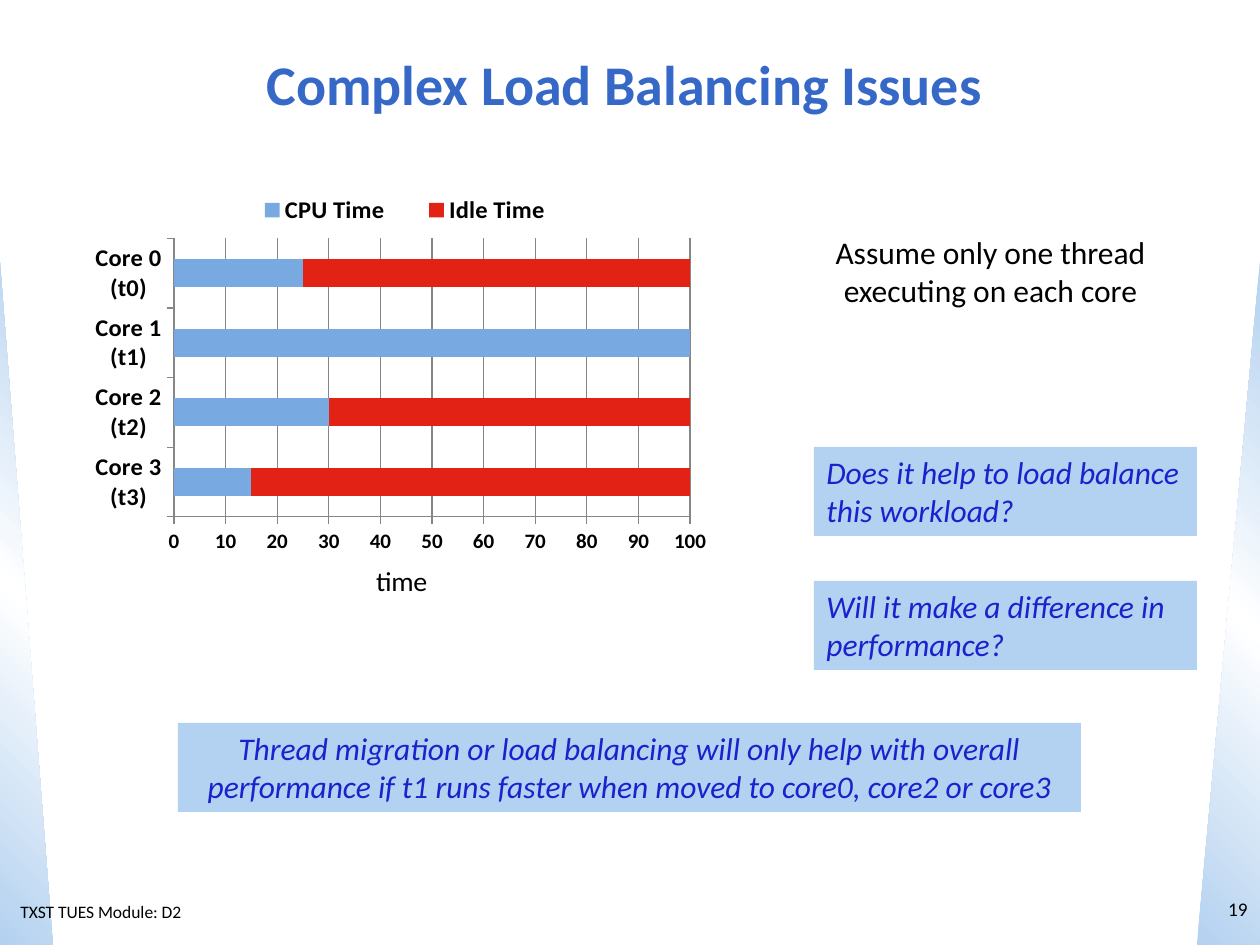
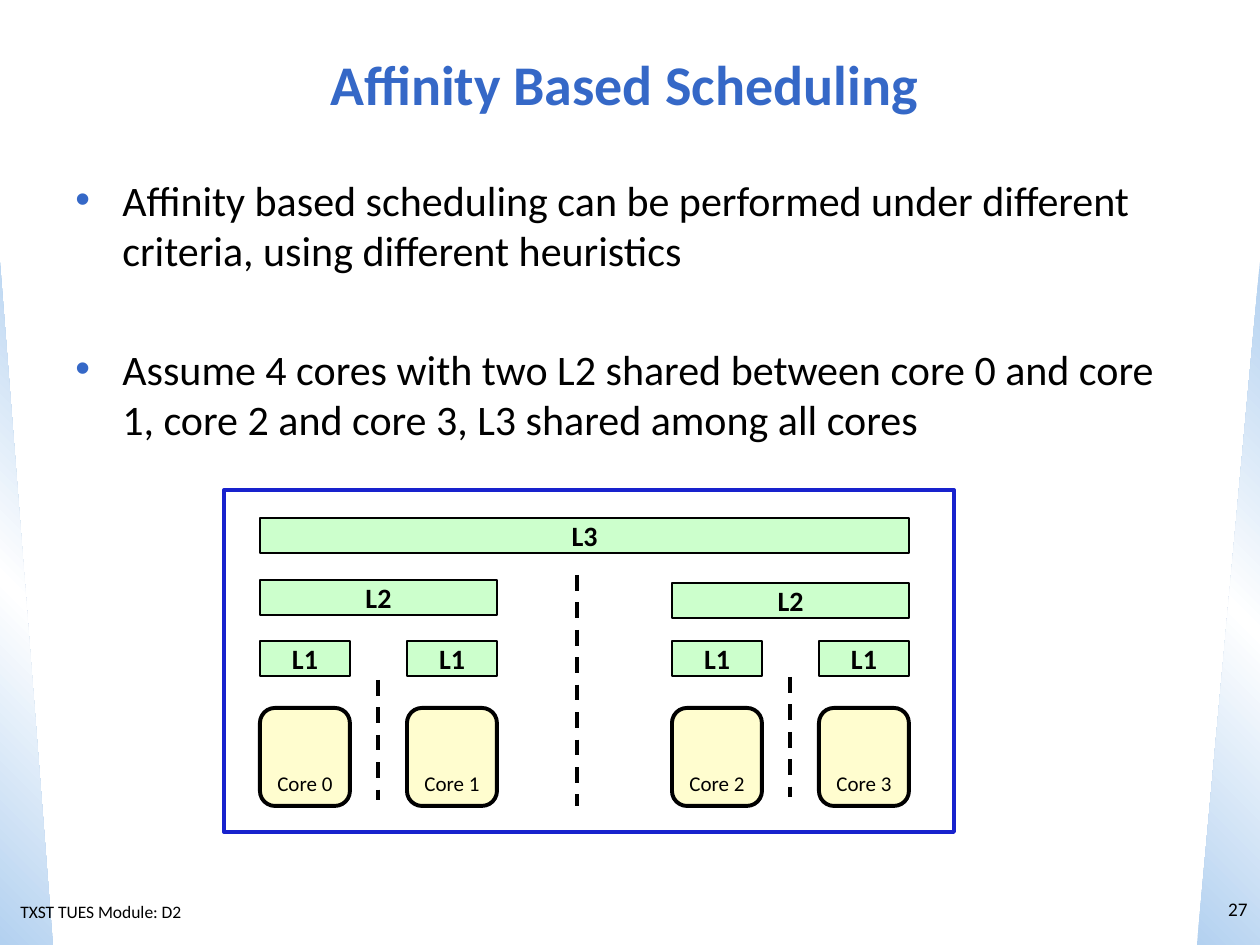
from copy import deepcopy
from dataclasses import dataclass

from lxml import etree
from pptx import Presentation
from pptx.chart.data import CategoryChartData
from pptx.dml.color import RGBColor
from pptx.enum.chart import XL_CHART_TYPE, XL_LEGEND_POSITION, XL_TICK_MARK
from pptx.enum.dml import MSO_LINE
from pptx.enum.shapes import MSO_CONNECTOR, MSO_SHAPE
from pptx.enum.text import MSO_ANCHOR, PP_ALIGN
from pptx.oxml.ns import qn
from pptx.util import Emu, Pt

RECT, ROUND = MSO_SHAPE.RECTANGLE, MSO_SHAPE.ROUNDED_RECTANGLE
WEDGE = MSO_SHAPE.RIGHT_TRIANGLE
LEFT, MID, RIGHT = PP_ALIGN.LEFT, PP_ALIGN.CENTER, PP_ALIGN.RIGHT
TOP, CENTER, BOTTOM = MSO_ANCHOR.TOP, MSO_ANCHOR.MIDDLE, MSO_ANCHOR.BOTTOM
OUT = XL_TICK_MARK.OUTSIDE
STACKED, ABOVE = XL_CHART_TYPE.BAR_STACKED, XL_LEGEND_POSITION.TOP
STRAIGHT, DASHED = MSO_CONNECTOR.STRAIGHT, MSO_LINE.DASH


@dataclass(frozen=True)
class Theme:
    font: str = "Calibri"
    ink: str = "000000"
    white: str = "FFFFFF"
    title: str = "3568C7"
    accent: str = "1822CD"
    pale: str = "B3D1F0"
    busy: str = "78A9E1"
    idle: str = "E12214"
    grid: str = "868686"
    cache: str = "CCFFCC"
    core: str = "FFFDCF"
    head: int = 32
    body: int = 24
    note: int = 18
    label: int = 16
    legend: int = 14
    small: int = 12
    page: int = 11
    foot: int = 10
    thin: float = 0.75
    thick: float = 2.25


T = Theme()


def px(n):
    return Emu(round(n * 914400 / 126))


def rgb(code):
    return RGBColor.from_string(code)


def style(font, size, color=T.ink, bold=False, italic=False):
    font.name, font.size = T.font, Pt(size)
    font.bold, font.italic = bold, italic
    font.color.rgb = rgb(color)


def write(shape, text, size, align=LEFT, anchor=TOP, wrap=True, **look):
    frame = shape.text_frame
    frame.word_wrap, frame.vertical_anchor = wrap, anchor
    frame.text = text
    para = frame.paragraphs[0]
    para.alignment = align
    style(para.font, size, **look)


def label(slide, box, text, size, **look):
    shape = slide.shapes.add_textbox(*map(px, box))
    write(shape, text, size, **look)
    return shape


def block(slide, box, fill=None, line=None, width=T.thin, kind=RECT):
    shape = slide.shapes.add_shape(kind, *map(px, box))
    shape.shadow.inherit = False
    if fill:
        shape.fill.solid()
        shape.fill.fore_color.rgb = rgb(fill)
    else:
        shape.fill.background()
    if line:
        shape.line.color.rgb = rgb(line)
        shape.line.width = Pt(width)
    else:
        shape.line.fill.background()
    return shape


def dash(slide, x, top, bottom):
    rule = slide.shapes.add_connector(
        STRAIGHT, px(x), px(top), px(x), px(bottom))
    rule.line.color.rgb = rgb(T.ink)
    rule.line.width = Pt(T.thick)
    rule.line.dash_style = DASHED
    etree.SubElement(rule._element.spPr, qn("a:effectLst"))


# Shared parts: side wedges and footer live on the layout
def wedge(slide, box, angle, flip=False):
    shape = block(slide, box, kind=WEDGE)
    shape.fill.gradient()
    shape.fill.gradient_angle = angle
    props = shape.element.spPr
    stops = props.find(qn("a:gradFill")).find(qn("a:gsLst"))
    stops.insert(1, deepcopy(stops[0]))
    colors = (T.pale, T.white, T.pale)
    for stop, pos, color in zip(shape.fill.gradient_stops, (0, 0.5, 1), colors):
        stop.position = pos
        stop.color.rgb = rgb(color)
    if flip:
        props.find(qn("a:xfrm")).set("flipH", "1")
    return shape


def dress(layout, slide):
    parts = [
        wedge(slide, (0, 262, 53, 683), 45),
        wedge(slide, (1197, 262, 63, 683), 315, flip=True),
        label(slide, (8, 895, 220, 34), "TXST TUES Module: D2", T.foot),
    ]
    tree = layout.shapes.element
    for i, part in enumerate(parts):
        part.element.find(qn("p:nvSpPr")).find(qn("p:cNvPr")).set(
            "id", str(100 + i))
        tree.insert(2 + i, part.element)


def start(deck, layout, title, page):
    slide = deck.slides.add_slide(layout)
    head = slide.shapes.title
    head.left, head.top, head.width, head.height = map(px, (31, 31, 1187, 105))
    write(head, title, T.head, MID, CENTER, color=T.title, bold=True)
    label(slide, (1197, 872, 63, 73), page, T.page, align=RIGHT, anchor=CENTER)
    return slide


# Chart of core usage
def place(part, inner=False, **spots):
    old = part.find(qn("c:layout"))
    if old is not None:
        part.remove(old)
    layout = etree.Element(qn("c:layout"))
    manual = etree.SubElement(layout, qn("c:manualLayout"))
    if inner:
        etree.SubElement(manual, qn("c:layoutTarget")).set("val", "inner")
    for mode in ("xMode", "yMode"):
        etree.SubElement(manual, qn("c:" + mode)).set("val", "edge")
    for key, value in spots.items():
        etree.SubElement(manual, qn("c:" + key)).set("val", str(value))
    cover = part.find(qn("c:overlay"))
    if cover is None:
        part.insert(0, layout)
    else:
        cover.addprevious(layout)


def usage(slide, box):
    data = CategoryChartData()
    data.categories = [f"Core {n} (t{n})" for n in (3, 2, 1, 0)]
    busy = (15, 30, 100, 25)
    data.add_series("CPU Time", busy)
    data.add_series("Idle Time", [100 - n for n in busy])
    chart = slide.shapes.add_chart(STACKED, *map(px, box), data).chart
    root = chart.element.find(qn("c:chart"))
    style(chart.font, T.foot)
    chart.has_title = False

    plot = chart.plots[0]
    plot.gap_width, plot.overlap, plot.vary_by_categories = 150, 100, False
    for series, color in zip(plot.series, (T.busy, T.idle)):
        series.format.fill.solid()
        series.format.fill.fore_color.rgb = rgb(color)
    place(root.find(qn("c:plotArea")), inner=True,
          x=0.14, y=0.11, w=0.76, h=0.69)

    cats, vals = chart.category_axis, chart.value_axis
    for axis, size in ((cats, T.legend), (vals, T.small)):
        axis.major_tick_mark = OUT
        axis.format.line.color.rgb = rgb(T.grid)
        style(axis.tick_labels.font, size, bold=True)
    vals.minimum_scale, vals.maximum_scale, vals.major_unit = 0, 100, 10
    vals.has_major_gridlines = True
    vals.major_gridlines.format.line.color.rgb = rgb(T.grid)
    frame = vals.axis_title.text_frame
    frame.text = "time"
    style(frame.paragraphs[0].font, T.label)
    place(frame._txBody.getparent().getparent(), x=0.43, y=0.9)

    chart.has_legend = True
    legend = chart.legend
    legend.position = ABOVE
    legend.include_in_layout = False
    style(legend.font, T.legend, bold=True)
    place(root.find(qn("c:legend")), x=0.22, y=0, w=0.52, h=0.08)


def note(slide, box, text, align=LEFT):
    write(block(slide, box, T.pale), text, T.note, align,
          color=T.accent, italic=True)


def balance(deck, layout):
    slide = start(deck, layout, "Complex Load Balancing Issues", "19")
    dress(layout, slide)
    usage(slide, (79, 194, 679, 413))
    label(slide, (799, 227, 383, 89),
          "Assume only one thread executing on each core", T.note, align=MID)
    asks = ("Does it help to load balance this workload?",
            "Will it make a difference in performance?")
    for i, text in enumerate(asks):
        note(slide, (814, 447 + 134 * i, 383, 89), text)
    note(slide, (178, 723, 903, 89),
         "Thread migration or load balancing will only help with overall "
         "performance if t1 runs faster when moved to core0, core2 or core3",
         MID)


# Bullets and cache diagram
def bullets(slide, box, lines):
    frame = slide.shapes.add_textbox(*map(px, box)).text_frame
    frame.word_wrap = True
    for i, text in enumerate(lines):
        para = frame.paragraphs[0] if i == 0 else frame.add_paragraph()
        para.text = text
        props = para._p.get_or_add_pPr()
        props.set("marL", str(px(47)))
        props.set("indent", str(px(-47)))
        tint = etree.SubElement(props, qn("a:buClr"))
        etree.SubElement(tint, qn("a:srgbClr")).set("val", T.title)
        etree.SubElement(props, qn("a:buFont")).set("typeface", "Arial")
        etree.SubElement(props, qn("a:buChar")).set("char", "•")
        if i:
            para.space_before = Pt(39)
        style(para.font, T.body)


def cache(slide, box, text):
    write(block(slide, box, T.cache, T.ink), text, T.label, MID, CENTER,
          wrap=False, bold=True)


def chip(slide, box):
    x, y, _, _ = box
    side, pitch, tall = 90, 147, 35
    span = pitch + side
    for half, (left, drop, rule) in enumerate(((36, 0, 190), (448, 3, 187))):
        for i in range(2):
            spot = x + left + pitch * i
            core = block(slide, (spot, y + 218, side, 98), T.core, T.ink,
                         T.thick, ROUND)
            write(core, f"Core {2 * half + i}", T.small, MID, BOTTOM)
            cache(slide, (spot, y + 151, side, tall), "L1")
        cache(slide, (x + left, y + 90 + drop, span, tall), "L2")
        dash(slide, x + left + span // 2, y + rule, y + rule + 120)
    cache(slide, (x + 36, y + 28, 412 + span, tall), "L3")
    dash(slide, x + 353, y + 85, y + 316)
    block(slide, box, line=T.accent, width=T.thick)


def affinity(deck, layout):
    slide = start(deck, layout, "Affinity Based Scheduling", "27")
    bullets(slide, (63, 168, 1134, 300), (
        "Affinity based scheduling can be performed under different "
        "criteria, using different heuristics",
        "Assume 4 cores with two L2 shared between core 0 and core 1, "
        "core 2 and core 3, L3 shared among all cores"))
    chip(slide, (224, 490, 730, 342))


def main():
    deck = Presentation()
    deck.slide_width, deck.slide_height = px(1260), px(945)
    layout = deck.slide_layouts[5]
    balance(deck, layout)
    affinity(deck, layout)
    deck.save("out.pptx")


if __name__ == "__main__":
    main()
